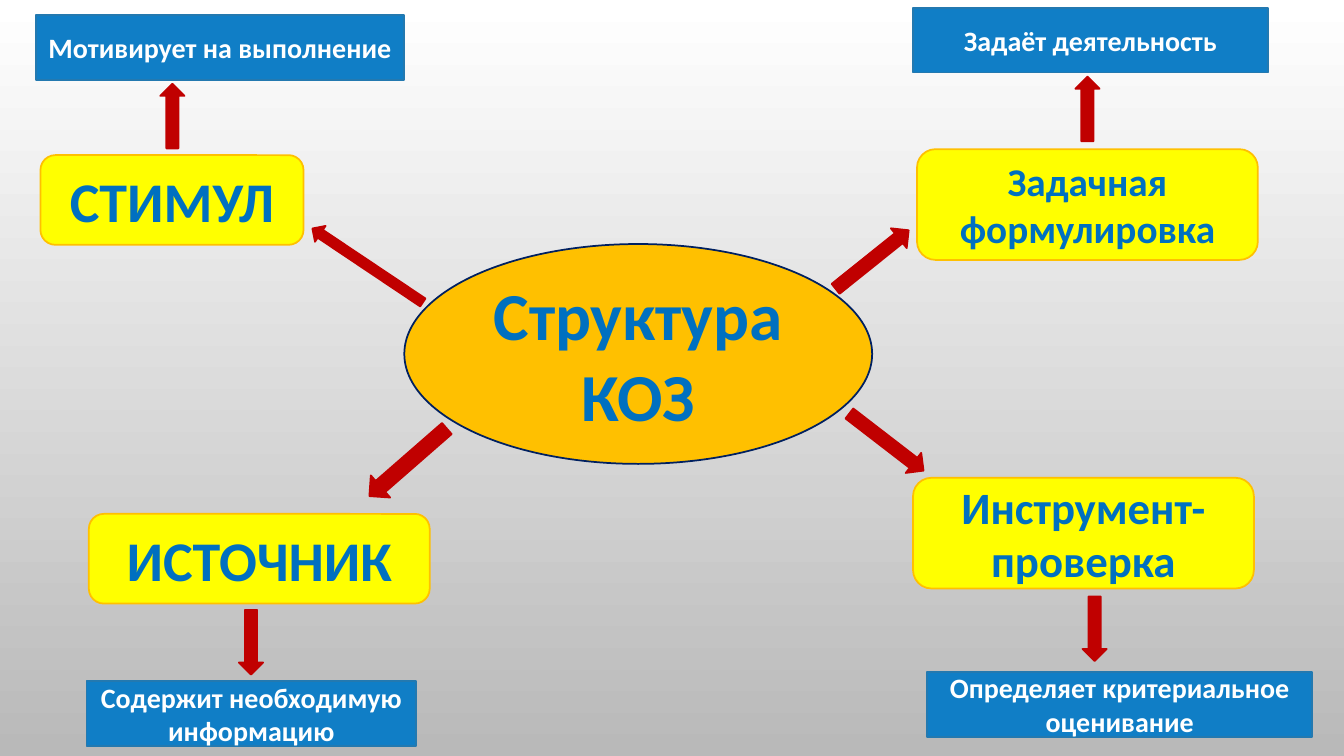
from pptx import Presentation
from pptx.dml.color import RGBColor
from pptx.enum.shapes import MSO_SHAPE
from pptx.enum.text import MSO_ANCHOR, PP_ALIGN
from pptx.util import Cm, Pt

ELLIPSE = MSO_SHAPE.OVAL
CARD = MSO_SHAPE.FLOWCHART_ALTERNATE_PROCESS
RECT = MSO_SHAPE.RECTANGLE
ARROW = MSO_SHAPE.RIGHT_ARROW
MIDDLE = MSO_ANCHOR.MIDDLE
CENTER = PP_ALIGN.CENTER

COLORS = {
    "bg_top": "FFFFFF", "bg_bottom": "B9B9B9",
    "orange": "FFC000", "navy": "002060", "yellow": "FFFF00",
    "blue": "0070C0", "note": "107EC6", "note_line": "2379B0",
    "red": "C00000", "white": "FFFFFF",
}
NOTE_HEIGHT = 1.63
UP, DOWN = 270, 90

# Boxes are (left, top, width, height) in cm; notes and their arrows
# share a size, so only what varies is given.
BRANCHES = [
    {"name": "СТИМУЛ", "size": 40, "card": (1.02, 3.91, 6.63, 2.26),
     "spoke": (7.59, 6.45, 3.35, 0.48), "angle": 213.8,
     "link": (3.53, 2.62), "turn": UP,
     "note": "Мотивирует на выполнение", "note_at": (0.91, 0.38, 9.27)},
    {"name": "Задачная формулировка", "size": 28, "card": (23.11, 3.76, 8.59, 2.79),
     "spoke": (20.8, 6.22, 2.36, 0.64), "angle": 321.3,
     "link": (26.59, 2.44), "turn": UP,
     "note": "Задаёт деятельность", "note_at": (23.01, 0.2, 8.94)},
    {"name": "ИСТОЧНИК", "size": 40, "card": (2.24, 12.95, 8.59, 2.26),
     "spoke": (8.99, 11.28, 2.59, 0.74), "angle": 138.9,
     "link": (5.51, 15.88), "turn": DOWN,
     "note": "Содержит необходимую информацию", "note_at": (2.18, 17.17, 8.31)},
    {"name": "Инструмент-проверка", "size": 32, "card": (23.01, 12.04, 8.59, 2.79),
     "spoke": (21.16, 10.82, 2.36, 0.64), "angle": 37.6,
     "link": (26.77, 15.54), "turn": DOWN,
     "note": "Определяет критериальное оценивание", "note_at": (23.37, 16.94, 9.7)},
]


def rgb(name):
    return RGBColor.from_string(COLORS[name])


def set_background(s):
    fill = s.background.fill
    fill.gradient()
    fill.gradient_angle = 270
    for stop, name in zip(fill.gradient_stops, ("bg_top", "bg_bottom")):
        stop.color.rgb = rgb(name)


def add_box(s, kind, box, fill, line):
    sp = s.shapes.add_shape(kind, *(Cm(v) for v in box))
    sp.shadow.inherit = False
    sp.fill.solid()
    sp.fill.fore_color.rgb = rgb(fill)
    sp.line.color.rgb = rgb(line)
    sp.line.width = Pt(1.25)
    return sp


def write(sp, text, size, color="blue", bold=True, font="Calibri"):
    tf = sp.text_frame
    tf.word_wrap = True
    tf.vertical_anchor = MIDDLE
    p = tf.paragraphs[0]
    p.alignment = CENTER
    r = p.add_run()
    r.text = text
    r.font.name = font
    r.font.size = Pt(size)
    r.font.bold = bold
    r.font.color.rgb = rgb(color)


def add_arrow(s, box, angle):
    add_box(s, ARROW, box, "red", "red").rotation = angle


def add_branch(s, branch):
    """Draw a card, its arrow from the centre, and the note it leads to."""
    card = add_box(s, CARD, branch["card"], "yellow", "orange")
    write(card, branch["name"], branch["size"])
    add_arrow(s, branch["spoke"], branch["angle"])
    add_arrow(s, (*branch["link"], 1.63, 0.61), branch["turn"])
    note = add_box(s, RECT, (*branch["note_at"], NOTE_HEIGHT), "note", "note_line")
    write(note, branch["note"], 20, color="white")


def main():
    prs = Presentation()
    prs.slide_width, prs.slide_height = Cm(33.87), Cm(19.05)
    s = prs.slides.add_slide(prs.slide_layouts[6])
    set_background(s)
    centre = add_box(s, ELLIPSE, (10.19, 6.15, 11.79, 5.54), "orange", "navy")
    write(centre, "Структура КОЗ", 48)
    for branch in BRANCHES:
        add_branch(s, branch)
    prs.save("out.pptx")


if __name__ == "__main__":
    main()
